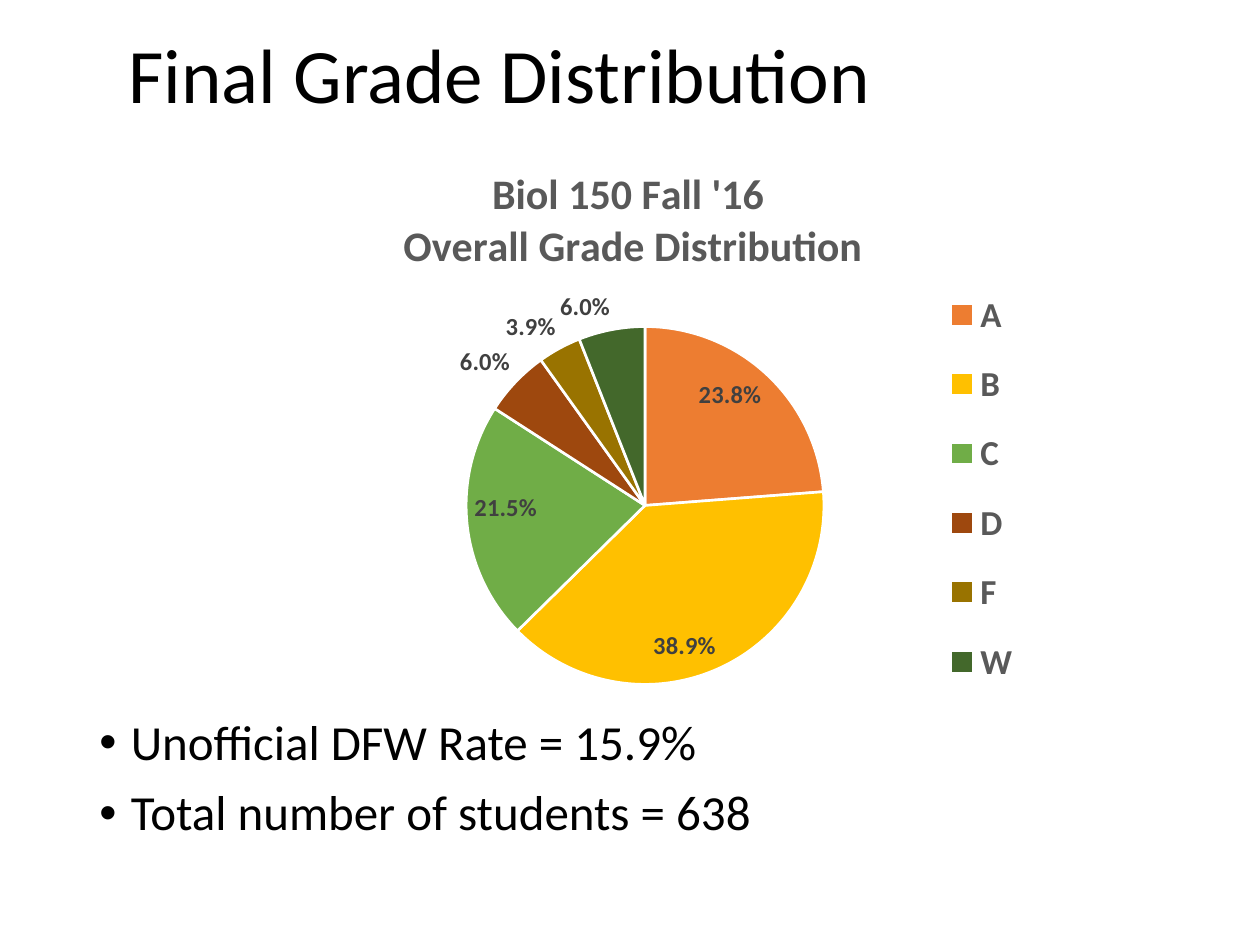
from dataclasses import dataclass

from lxml.etree import SubElement
from pptx import Presentation
from pptx.chart.data import CategoryChartData
from pptx.dml.color import RGBColor
from pptx.enum.chart import XL_CHART_TYPE as ChartType
from pptx.enum.chart import XL_LABEL_POSITION as LabelPos
from pptx.enum.chart import XL_LEGEND_POSITION as LegendPos
from pptx.enum.text import MSO_ANCHOR as Anchor
from pptx.oxml import parse_xml
from pptx.oxml.ns import nsdecls, qn
from pptx.util import Emu, Pt

PX_PER_INCH = 126


@dataclass(frozen=True)
class Theme:
    font: str = "Calibri"
    text: str = "000000"
    heading: str = "595959"
    label: str = "404040"
    divider: str = "FFFFFF"
    title_pt: int = 44
    body_pt: int = 28
    chart_pt: int = 10
    chart_title_pt: int = 24
    legend_pt: int = 20
    label_pt: int = 14


@dataclass(frozen=True)
class Box:
    x: int
    y: int
    w: int
    h: int

    def emu(self) -> tuple:
        return tuple(px(v) for v in (self.x, self.y, self.w, self.h))


@dataclass(frozen=True)
class Grade:
    name: str
    share: float
    color: str
    label_pos: LabelPos


THEME = Theme()
CHART_BOX = Box(229, 139, 801, 630)
PIE_BOX = Box(466, 327, 358, 358)
LEGEND_BOX = Box(935, 267, 95, 443)
HEADING_BOX = Box(400, 164, 459, 102)
GRADES = [
    Grade("A", 0.238, "ED7D31", LabelPos.INSIDE_END),
    Grade("B", 0.389, "FFC000", LabelPos.INSIDE_END),
    Grade("C", 0.215, "70AD47", LabelPos.INSIDE_END),
    Grade("D", 0.06, "9E480E", LabelPos.OUTSIDE_END),
    Grade("F", 0.039, "997300", LabelPos.OUTSIDE_END),
    Grade("W", 0.06, "43682B", LabelPos.OUTSIDE_END),
]


def px(n: int) -> Emu:
    return Emu(round(n * 914400 / PX_PER_INCH))


def style(font, size: int, color: str, bold: bool = False) -> None:
    font.name = THEME.font
    font.size = Pt(size)
    font.bold = bold
    font.color.rgb = RGBColor.from_string(color)


def add_bullet(p) -> None:
    pPr = p._p.get_or_add_pPr()
    pPr.set("marL", "228600")
    pPr.set("indent", "-228600")
    SubElement(pPr, qn("a:buFont")).set("typeface", "Arial")
    SubElement(pPr, qn("a:buChar")).set("char", "•")


def add_text(s, box: Box, lines: list[str], size: int, anchor: Anchor,
             bulleted: bool = False) -> None:
    tf = s.shapes.add_textbox(*box.emu()).text_frame
    tf.word_wrap = True
    tf.vertical_anchor = anchor
    for i, line in enumerate(lines):
        p = tf.add_paragraph() if i else tf.paragraphs[0]
        p.line_spacing = 0.9
        if bulleted:
            p.space_before = Pt(10)
            add_bullet(p)
        r = p.add_run()
        r.text = line
        style(r.font, size, THEME.text)


def place(chart, tag: str, box: Box, index: int, sized: bool = True) -> None:
    parent = chart.element.find(f".//{qn(tag)}")
    for old in parent.findall(qn("c:layout")):
        parent.remove(old)
    layout = parse_xml(f"<c:layout {nsdecls('c')}/>")
    manual = SubElement(layout, qn("c:manualLayout"))
    settings = [("layoutTarget", "inner")] if tag == "c:plotArea" else []
    settings += [("xMode", "edge"), ("yMode", "edge"),
                 ("x", round((box.x - CHART_BOX.x) / CHART_BOX.w, 3)),
                 ("y", round((box.y - CHART_BOX.y) / CHART_BOX.h, 3))]
    if sized:
        settings += [("w", round(box.w / CHART_BOX.w, 3)),
                     ("h", round(box.h / CHART_BOX.h, 3))]
    for name, value in settings:
        SubElement(manual, qn(f"c:{name}")).set("val", str(value))
    parent.insert(index, layout)


def add_heading(chart, lines: list[str]) -> None:
    chart.has_title = True
    tf = chart.chart_title.text_frame
    for i, line in enumerate(lines):
        p = tf.add_paragraph() if i else tf.paragraphs[0]
        r = p.add_run()
        r.text = line
        style(r.font, THEME.chart_title_pt, THEME.heading, True)
    place(chart, "c:title", HEADING_BOX, 1, sized=False)


def add_legend(chart) -> None:
    chart.has_legend = True
    chart.legend.position = LegendPos.BOTTOM
    chart.legend.include_in_layout = False
    style(chart.legend.font, THEME.legend_pt, THEME.heading, True)
    place(chart, "c:legend", LEGEND_BOX, 1)


def add_pie(s, grades: list[Grade]) -> None:
    data = CategoryChartData(number_format="0.0%")
    data.categories = [g.name for g in grades]
    data.add_series("Series 1", [g.share for g in grades])
    chart = s.shapes.add_chart(ChartType.PIE, *CHART_BOX.emu(), data).chart
    style(chart.font, THEME.chart_pt, THEME.text)
    add_heading(chart, ["Biol 150 Fall '16 ", "Overall Grade Distribution"])
    add_legend(chart)
    place(chart, "c:plotArea", PIE_BOX, 0)

    plot = chart.plots[0]
    plot.vary_by_categories = True
    series = plot.series[0]
    labels = series.data_labels
    labels.show_value = True
    labels.show_percentage = False
    labels.number_format = "0.0%"
    labels.number_format_is_linked = False
    style(labels.font, THEME.label_pt, THEME.label, True)
    for i, grade in enumerate(grades):
        point = series.points[i]
        point.format.fill.solid()
        point.format.fill.fore_color.rgb = RGBColor.from_string(grade.color)
        point.format.line.color.rgb = RGBColor.from_string(THEME.divider)
        point.format.line.width = Pt(1.5)
        style(point.data_label.font, THEME.label_pt, THEME.label, True)
        point.data_label.position = grade.label_pos


def main() -> None:
    prs = Presentation()
    prs.slide_width, prs.slide_height = px(1260), px(945)
    s = prs.slides.add_slide(prs.slide_layouts[6])
    add_text(s, Box(116, 20, 1086, 118), ["Final Grade Distribution"],
             THEME.title_pt, Anchor.MIDDLE)
    add_text(s, Box(87, 712, 1086, 140),
             ["Unofficial DFW Rate = 15.9%", "Total number of students = 638"],
             THEME.body_pt, Anchor.TOP, bulleted=True)
    add_pie(s, GRADES)
    prs.save("out.pptx")


if __name__ == "__main__":
    main()
